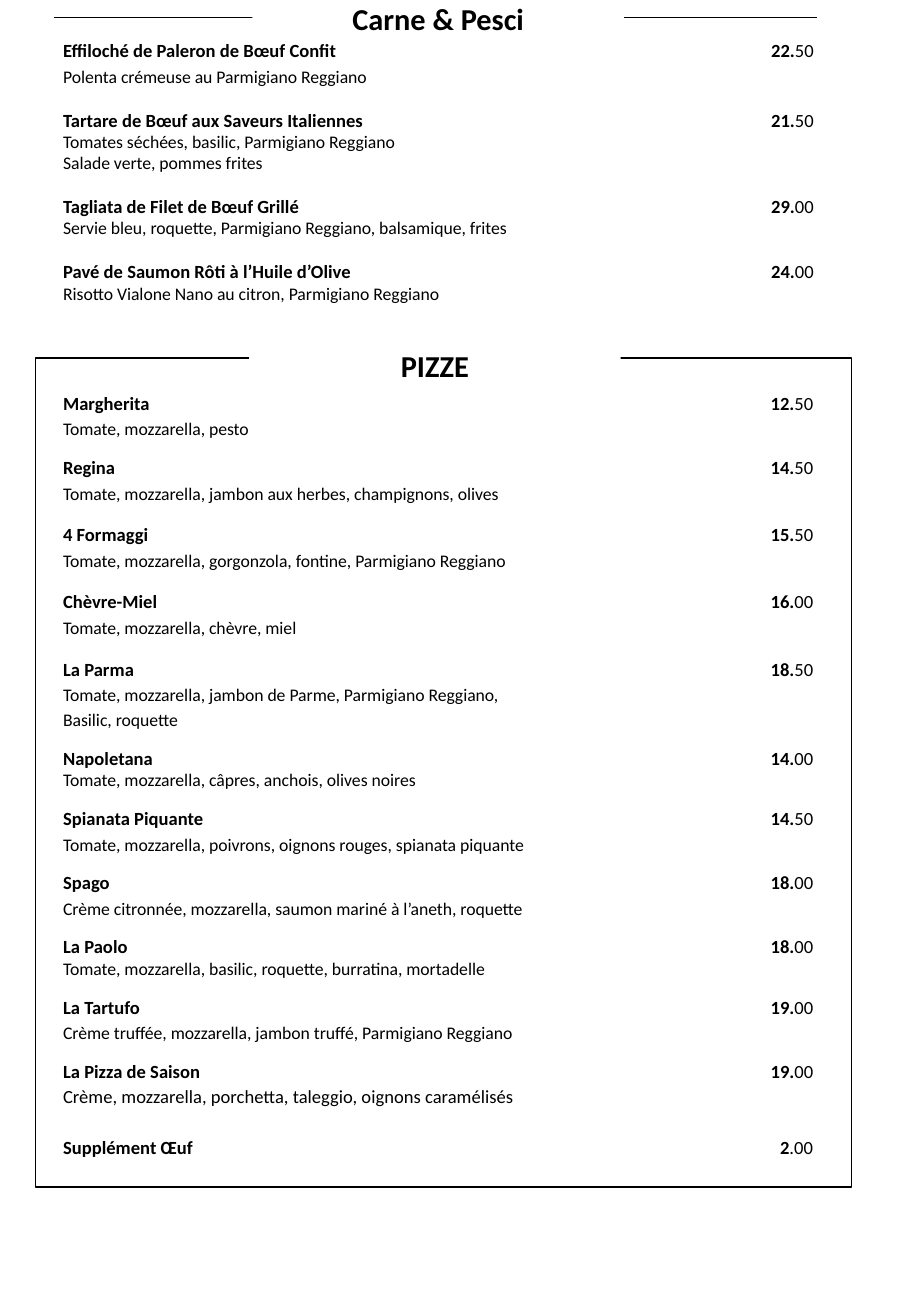
"""Build the meat, fish and pizza page of a restaurant menu."""
from dataclasses import dataclass

from lxml import etree
from pptx import Presentation
from pptx.dml.color import RGBColor
from pptx.enum.shapes import MSO_CONNECTOR, MSO_SHAPE
from pptx.enum.text import MSO_ANCHOR, PP_ALIGN
from pptx.oxml.ns import qn
from pptx.shapes.autoshape import Shape
from pptx.slide import Slide
from pptx.text.text import TextFrame, _Paragraph
from pptx.util import Cm, Pt

BLACK = RGBColor(0x00, 0x00, 0x00)
WHITE = RGBColor(0xFF, 0xFF, 0xFF)
FONT = "Calibri"
RECT = MSO_SHAPE.RECTANGLE
STRAIGHT = MSO_CONNECTOR.STRAIGHT
TOP = MSO_ANCHOR.TOP
CENTER = PP_ALIGN.CENTER
NAME_SIZE = 11
LOOSE = Pt(15)
SINGLE = 1.0


@dataclass
class Dish:
    name: str
    whole: str
    cents: str
    details: tuple[str, ...] = ()
    loose_name: bool = False
    loose_details: bool = True
    gap: float = 9.8
    detail_size: float = 10.5


@dataclass
class Section:
    title: str
    title_left: float
    title_top: float
    list_top: float
    list_height: float
    tab: float
    tab_align: str
    dishes: list[Dish]


MEAT_FISH = Section("Carne & Pesci", 5.28, 0, 0.76, 6.15, 15.7, "r", [
    Dish("Effiloché de Paleron de Bœuf Confit", "22.", "50",
         ("Polenta crémeuse au Parmigiano Reggiano",), loose_name=True, gap=0),
    Dish("Tartare de Bœuf aux Saveurs Italiennes", "21.", "50",
         ("Tomates séchées, basilic, Parmigiano Reggiano",
          "Salade verte, pommes frites"), loose_details=False, gap=12.8),
    Dish("Tagliata de Filet de Bœuf Grillé", "29.", "00",
         ("Servie bleu, roquette, Parmigiano Reggiano, balsamique, frites",),
         loose_details=False, gap=12.8),
    Dish("Pavé de Saumon Rôti à l’Huile d’Olive", "24.", "00",
         ("Risotto Vialone Nano au citron, Parmigiano Reggiano",),
         loose_details=False, gap=12.8),
])

PIZZAS = Section("PIZZE", 5.21, 7.26, 8.13, 15.95, 15.19, "dec", [
    Dish("Margherita", "12.", "50", ("Tomate, mozzarella, pesto",),
         loose_name=True, gap=0),
    Dish("Regina", "14.", "50",
         ("Tomate, mozzarella, jambon aux herbes, champignons, olives",)),
    Dish("4 Formaggi", "15.", "50",
         ("Tomate, mozzarella, gorgonzola, fontine, Parmigiano Reggiano",),
         loose_name=True),
    Dish("Chèvre-Miel", "16.", "00", ("Tomate, mozzarella, chèvre, miel",),
         loose_name=True),
    Dish("La Parma", "18.", "50",
         ("Tomate, mozzarella, jambon de Parme, Parmigiano Reggiano,",
          "Basilic, roquette"), loose_name=True),
    Dish("Napoletana", "14.", "00",
         ("Tomate, mozzarella, câpres, anchois, olives noires",),
         loose_details=False),
    Dish("Spianata Piquante", "14.", "50",
         ("Tomate, mozzarella, poivrons, oignons rouges, spianata piquante",)),
    Dish("Spago", "18.", "00",
         ("Crème citronnée, mozzarella, saumon mariné à l’aneth, roquette",)),
    Dish("La Paolo", "18.", "00",
         ("Tomate, mozzarella, basilic, roquette, burratina, mortadelle",),
         loose_details=False),
    Dish("La Tartufo", "19.", "00",
         ("Crème truffée, mozzarella, jambon truffé, Parmigiano Reggiano",)),
    Dish("La Pizza de Saison", "19.", "00",
         ("Crème, mozzarella, porchetta, taleggio, oignons caramélisés",),
         detail_size=NAME_SIZE),
    Dish("Supplément Œuf", "2", ".00", loose_name=True, gap=15),
])


def clear_margins(tf: TextFrame) -> None:
    """Make the text start at the edges of its box and wrap."""
    tf.margin_left = tf.margin_right = tf.margin_top = tf.margin_bottom = 0
    tf.word_wrap = True
    tf.vertical_anchor = TOP


def set_font(p: _Paragraph, size: float) -> None:
    """Give a paragraph the menu font."""
    p.font.name = FONT
    p.font.size = Pt(size)
    p.font.color.rgb = BLACK


def add_text(p: _Paragraph, text: str, bold: bool) -> None:
    """Append a run to a paragraph."""
    r = p.add_run()
    r.text = text
    r.font.bold = bold


def add_tab(p: _Paragraph, position: float, align: str) -> None:
    """Set the tab stop that lines up the price."""
    tabs = etree.SubElement(p._p.get_or_add_pPr(), qn("a:tabLst"))
    etree.SubElement(tabs, qn("a:tab"), pos=str(Cm(position)), algn=align)


def add_rect(s: Slide, left: float, top: float, width: float, height: float) -> Shape:
    """Add a rectangle without fill, line or shadow."""
    sp = s.shapes.add_shape(RECT, Cm(left), Cm(top), Cm(width), Cm(height))
    sp.shadow.inherit = False
    sp.fill.background()
    sp.line.fill.background()
    return sp


def add_rule(s: Slide) -> None:
    """Draw the thin line that runs behind the first title."""
    line = s.shapes.add_connector(STRAIGHT, Cm(1.12), Cm(0.36), Cm(17.09), Cm(0.36))
    line.line.color.rgb = BLACK
    line.line.width = Pt(0.5)
    etree.SubElement(line._element.spPr, qn("a:effectLst"))


def add_frame(s: Slide) -> None:
    """Draw the border around the pizzas."""
    sp = add_rect(s, 0.74, 7.49, 17.07, 17.32)
    sp.line.color.rgb = BLACK
    sp.line.width = Pt(1)


def add_title(s: Slide, section: Section) -> None:
    """Add a section title that interrupts the line behind it."""
    sp = add_rect(s, section.title_left, section.title_top, 7.77, 0.76)
    sp.fill.solid()
    sp.fill.fore_color.rgb = WHITE
    clear_margins(sp.text_frame)
    p = sp.text_frame.paragraphs[0]
    p.alignment = CENTER
    set_font(p, 18)
    add_text(p, section.title, True)


def add_dishes(s: Slide, section: Section) -> None:
    """List the dishes of a section with their prices."""
    sp = s.shapes.add_textbox(Cm(1.32), Cm(section.list_top),
                              Cm(16.45), Cm(section.list_height))
    tf = sp.text_frame
    clear_margins(tf)
    for i, dish in enumerate(section.dishes):
        p = tf.add_paragraph() if i else tf.paragraphs[0]
        add_tab(p, section.tab, section.tab_align)
        p.line_spacing = LOOSE if dish.loose_name else SINGLE
        p.space_before = Pt(dish.gap)
        set_font(p, NAME_SIZE)
        add_text(p, f"{dish.name}\t{dish.whole}", True)
        add_text(p, dish.cents, False)
        for detail in dish.details:
            p = tf.add_paragraph()
            p.line_spacing = LOOSE if dish.loose_details else SINGLE
            set_font(p, dish.detail_size)
            add_text(p, detail, False)


def main() -> None:
    """Draw the menu page and save it."""
    prs = Presentation()
    prs.slide_width, prs.slide_height = Cm(19.05), Cm(27.51)
    s = prs.slides.add_slide(prs.slide_layouts[6])
    for section, add_border in ((MEAT_FISH, add_rule), (PIZZAS, add_frame)):
        add_dishes(s, section)
        add_border(s)
        add_title(s, section)
    prs.save("out.pptx")


if __name__ == "__main__":
    main()
